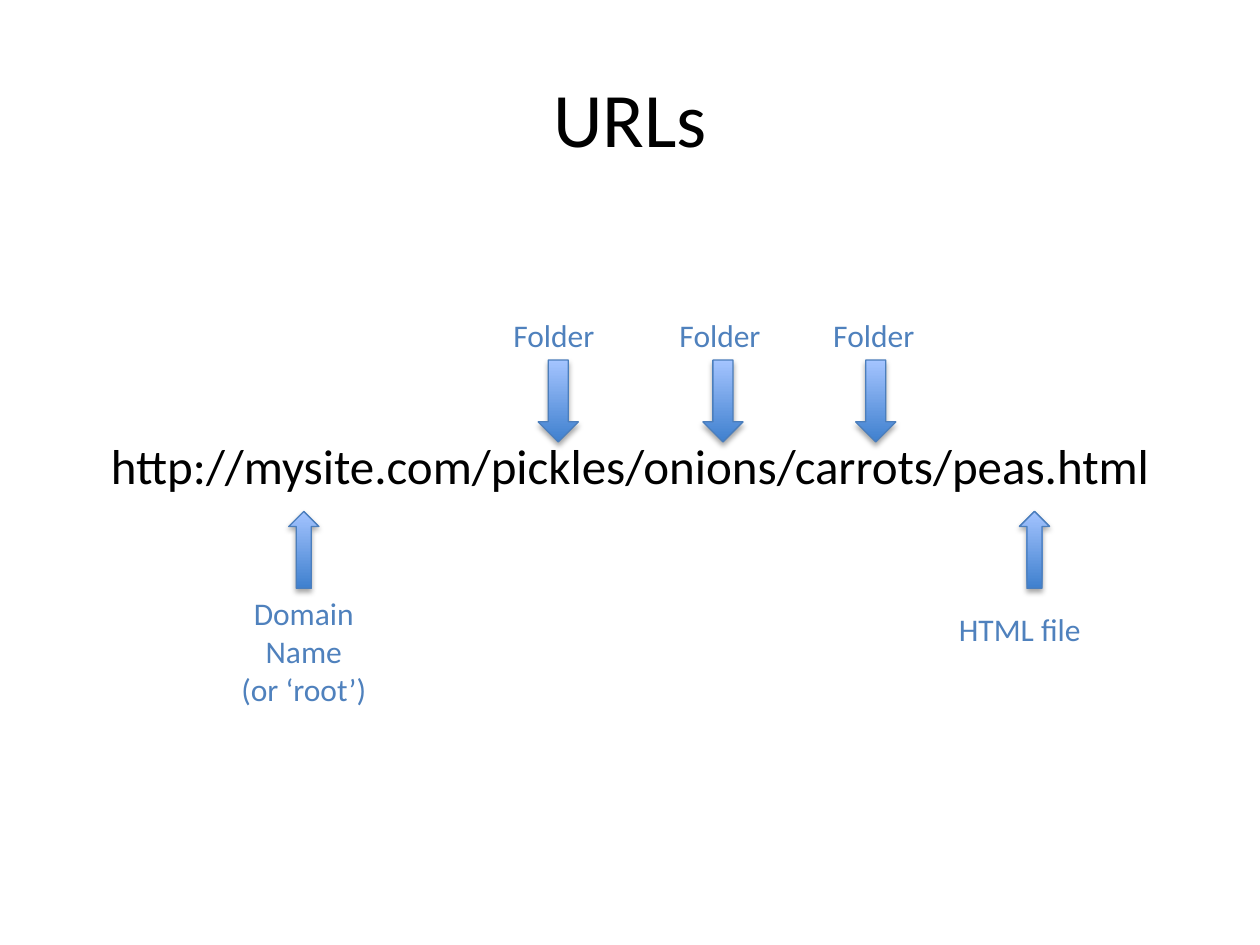
from lxml import etree
from pptx import Presentation
from pptx.dml.color import RGBColor
from pptx.enum.shapes import MSO_SHAPE
from pptx.enum.text import MSO_ANCHOR, PP_ALIGN
from pptx.oxml.ns import qn
from pptx.util import Cm, Pt

UP, DOWN = MSO_SHAPE.UP_ARROW, MSO_SHAPE.DOWN_ARROW
LEFT, MID = PP_ALIGN.LEFT, PP_ALIGN.CENTER
FONT = "Calibri"
COLORS = {"text": "000000", "label": "4F81BD", "line": "4B7EBC",
          "low": "3F80CE", "high": "A4C4FF", "shade": "000000"}

TITLE = "URLs"
URL = "http://mysite.com/pickles/onions/carrots/peas.html"
FOLDERS = [(9.91, 10.85), (13.26, 14.17), (16.36, 17.25)]
LABELS = [(["Folder"], (x, 6.25, 2.51, 1.02), MID) for x, _ in FOLDERS] + [
    (["HTML file"], (19.08, 12.17, 3.81, 1.02), LEFT),
    (["Domain", "Name", "(or ‘root’)"], (3.99, 11.86, 4.27, 2.57), MID),
]
ARROWS = [(UP, (x, 10.31, 0.61, 1.55)) for x in (5.82, 20.55)] + [
    (DOWN, (x, 7.26, 0.81, 1.65)) for _, x in FOLDERS
]


def color(name):
    """Look up a colour by its role."""
    return RGBColor.from_string(COLORS[name])


def write(frame, lines, size, tone, align=MID):
    """Fill a text frame with one paragraph per line."""
    frame.word_wrap = True
    frame.text = "\n".join(lines)
    for para in frame.paragraphs:
        para.alignment = align
        para.font.name, para.font.size = FONT, Pt(size)
        para.font.color.rgb = color(tone)


def add_text(slide, lines, box, size, tone, align=MID):
    """Add a text box."""
    shape = slide.shapes.add_textbox(*map(Cm, box))
    write(shape.text_frame, lines, size, tone, align)


def add_arrow(slide, kind, box):
    """Add a block arrow with a gradient and a soft shadow."""
    arrow = slide.shapes.add_shape(kind, *map(Cm, box))
    arrow.fill.gradient()
    arrow.fill.gradient_angle = 90
    for stop, tone in zip(arrow.fill.gradient_stops, ("low", "high")):
        stop.color.rgb = color(tone)
    arrow.line.color.rgb = color("line")
    arrow.line.width = Pt(0.75)
    arrow.shadow.inherit = False
    effects = arrow.element.spPr.find(qn("a:effectLst"))
    shade = etree.SubElement(effects, qn("a:outerShdw"), blurRad=str(Pt(3.1)),
                             dist=str(Pt(1.8)), dir="5400000", rotWithShape="0")
    tint = etree.SubElement(shade, qn("a:srgbClr"), val=COLORS["shade"])
    etree.SubElement(tint, qn("a:alpha"), val="35000")


def main():
    """Build the slide on the parts of a URL."""
    deck = Presentation()
    deck.slide_width, deck.slide_height = Cm(25.4), Cm(19.05)
    slide = deck.slides.add_slide(deck.slide_layouts[5])
    title = slide.shapes.title
    title.left, title.top, title.width, title.height = map(Cm, (1.27, 0.76, 22.86, 3.18))
    title.text_frame.vertical_anchor = MSO_ANCHOR.MIDDLE
    write(title.text_frame, [TITLE], 44, "text")
    add_text(slide, [URL], (1.27, 8.65, 22.86, 1.46), 28, "text")
    for lines, box, align in LABELS:
        add_text(slide, lines, box, 18, "label", align)
    for kind, box in ARROWS:
        add_arrow(slide, kind, box)
    deck.save("out.pptx")


if __name__ == "__main__":
    main()
